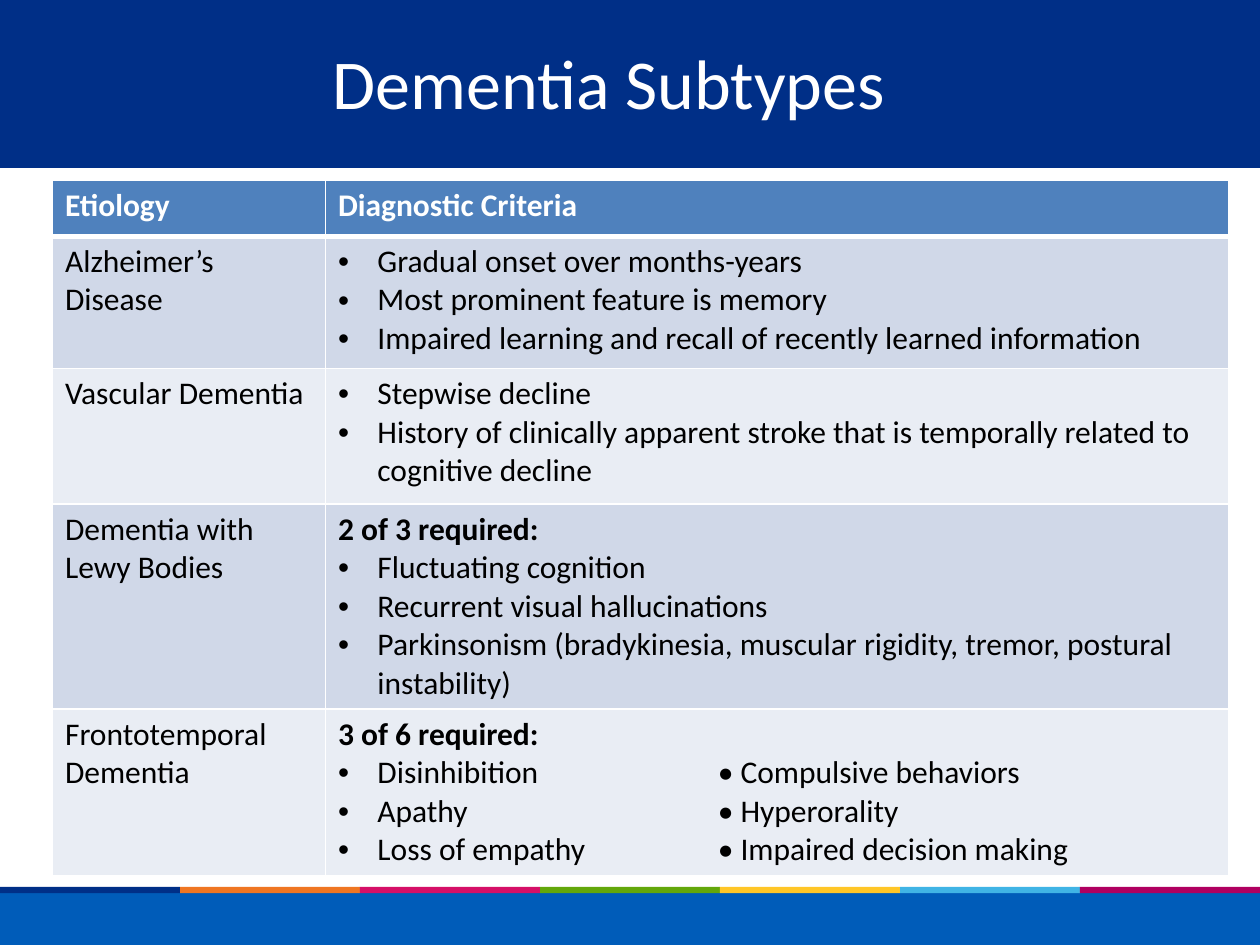
"""Build the Dementia Subtypes slide."""
from lxml.etree import SubElement
from pptx import Presentation
from pptx.dml.color import RGBColor
from pptx.enum.shapes import MSO_SHAPE as Shape
from pptx.enum.text import MSO_ANCHOR as Anchor, PP_ALIGN as Align
from pptx.oxml.ns import qn
from pptx.util import Pt

COLORS = {
    "white": "FFFFFF", "black": "000000", "navy": "002F87", "blue": "005CB9",
    "header": "4F81BD", "odd": "D0D8E8", "even": "E9EDF4",
}
STRIPES = ["002F87", "EF7622", "D51067", "63A70A", "FFC627", "40B4E5", "B00060"]
WIDTH, HEIGHT = 720, 540
COLUMN_WIDTHS = [156, 516]
ROW_HEIGHTS = [32, 75.5, 77.5, 117.2, 95]
INDENT = 22.5
TAB_STOP = 217
SUBTYPES = [
    ("Alzheimer’s Disease", None, [
        "Gradual onset over months-years",
        "Most prominent feature is memory",
        "Impaired learning and recall of recently learned information",
    ]),
    ("Vascular Dementia", None, [
        "Stepwise decline",
        "History of clinically apparent stroke that is temporally related to "
        "cognitive decline",
    ]),
    ("Dementia with Lewy Bodies", "2 of 3 required:", [
        "Fluctuating cognition",
        "Recurrent visual hallucinations",
        "Parkinsonism (bradykinesia, muscular rigidity, tremor, postural "
        "instability)",
    ]),
    ("Frontotemporal Dementia", "3 of 6 required:", [
        "Disinhibition\t• Compulsive behaviors",
        "Apathy\t• Hyperorality",
        "Loss of empathy\t• Impaired decision making",
    ]),
]


def add_run(paragraph, text, size, color, bold=False):
    run = paragraph.add_run()
    run.text = text
    run.font.name = "Calibri"
    run.font.size = Pt(size)
    run.font.bold = bold
    run.font.color.rgb = RGBColor.from_string(color)


def add_band(slide, left, top, width, height, color):
    band = slide.shapes.add_shape(
        Shape.RECTANGLE, Pt(left), Pt(top), Pt(width), Pt(height))
    band.shadow.inherit = False
    band.fill.solid()
    band.fill.fore_color.rgb = RGBColor.from_string(color)
    band.line.fill.background()


def add_title(slide, text):
    title = slide.shapes.title
    title.left, title.top, title.width, title.height = Pt(24), Pt(9.5), Pt(648), Pt(74)
    frame = title.text_frame
    frame.word_wrap = True
    frame.vertical_anchor = Anchor.MIDDLE
    paragraph = frame.paragraphs[0]
    paragraph.alignment = Align.CENTER
    add_run(paragraph, text, 40, COLORS["white"])
    slide.shapes.element.append(title.element)


def add_bullet(paragraph, tabbed):
    properties = paragraph._p.get_or_add_pPr()
    properties.set("marL", str(Pt(INDENT)))
    properties.set("indent", str(-Pt(INDENT)))
    SubElement(properties, qn("a:buFont"), typeface="Arial")
    SubElement(properties, qn("a:buChar"), char="•")
    if tabbed:
        tabs = SubElement(properties, qn("a:tabLst"))
        SubElement(tabs, qn("a:tab"), pos=str(Pt(TAB_STOP)), algn="l")


def style_cell(cell, color, top, bottom):
    properties = cell._tc.get_or_add_tcPr()
    for side, width in (("L", 1), ("R", 1), ("T", top), ("B", bottom)):
        line = SubElement(properties, qn(f"a:ln{side}"), w=str(Pt(width)))
        fill = SubElement(line, qn("a:solidFill"))
        SubElement(fill, qn("a:srgbClr"), val=COLORS["white"])
    cell.fill.solid()
    cell.fill.fore_color.rgb = RGBColor.from_string(color)


def fill_criteria(cell, heading, criteria):
    frame = cell.text_frame
    paragraph = frame.paragraphs[0]
    if heading:
        add_run(paragraph, heading, 18, COLORS["black"], bold=True)
        paragraph = frame.add_paragraph()
    for index, criterion in enumerate(criteria):
        if index:
            paragraph = frame.add_paragraph()
        add_bullet(paragraph, "\t" in criterion)
        add_run(paragraph, criterion, 18, COLORS["black"])


def add_subtype_table(slide):
    table = slide.shapes.add_table(
        len(ROW_HEIGHTS), len(COLUMN_WIDTHS), Pt(30), Pt(103),
        Pt(sum(COLUMN_WIDTHS)), Pt(sum(ROW_HEIGHTS))).table
    for column, width in zip(table.columns, COLUMN_WIDTHS):
        column.width = Pt(width)
    for row, height in zip(table.rows, ROW_HEIGHTS):
        row.height = Pt(height)
    for cell, text in zip(table.rows[0].cells, ("Etiology", "Diagnostic Criteria")):
        style_cell(cell, COLORS["header"], 1, 3)
        add_run(cell.text_frame.paragraphs[0], text, 18, COLORS["white"], bold=True)
    for number, (etiology, heading, criteria) in enumerate(SUBTYPES, 1):
        name_cell, criteria_cell = table.rows[number].cells
        for cell in (name_cell, criteria_cell):
            style_cell(cell, COLORS["odd" if number % 2 else "even"],
                       3 if number == 1 else 1, 1)
        add_run(name_cell.text_frame.paragraphs[0], etiology, 18, COLORS["black"])
        fill_criteria(criteria_cell, heading, criteria)


def main():
    presentation = Presentation()
    presentation.slide_width, presentation.slide_height = Pt(WIDTH), Pt(HEIGHT)
    slide = presentation.slides.add_slide(presentation.slide_layouts[5])
    add_band(slide, 0, 510, WIDTH, 30, COLORS["blue"])
    stripe_width = WIDTH / len(STRIPES)
    for index, color in enumerate(STRIPES):
        add_band(slide, index * stripe_width, 506.8, stripe_width, 3.6, color)
    add_band(slide, 0, 0, WIDTH, 96, COLORS["navy"])
    add_subtype_table(slide)
    add_title(slide, "Dementia Subtypes")
    presentation.save("out.pptx")


if __name__ == "__main__":
    main()
